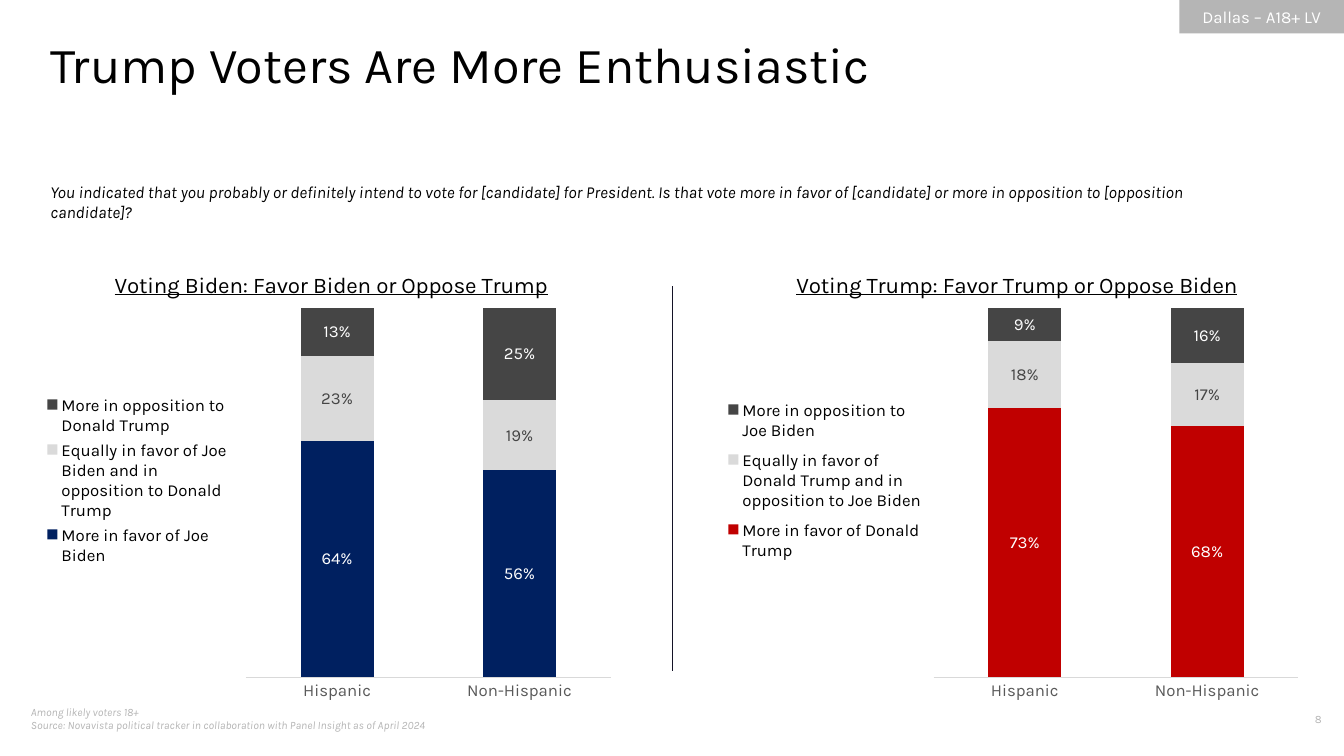
from lxml import etree
from pptx import Presentation
from pptx import util as u
from pptx.chart import data as cd
from pptx.dml import color as col
from pptx.enum import chart as ch, shapes, text
from pptx.oxml import ns

Cm, Pt = u.Cm, u.Pt


def style(font, size, tone, slant=False):
    font.name = "Karla"
    font.size = Pt(size)
    font.bold = False
    font.italic = slant
    font.color.rgb = col.RGBColor.from_string(tone)


def place(part, index, inner=False, **spots):
    for old in part.findall(ns.qn("c:layout")):
        part.remove(old)
    layout = etree.Element(ns.qn("c:layout"))
    manual = etree.SubElement(layout, ns.qn("c:manualLayout"))
    if inner:
        etree.SubElement(manual, ns.qn("c:layoutTarget"), val="inner")
    for mode in ("xMode", "yMode"):
        etree.SubElement(manual, ns.qn("c:" + mode), val="edge")
    for key, spot in spots.items():
        etree.SubElement(manual, ns.qn("c:" + key), val=str(spot))
    part.insert(index, layout)


deck = Presentation()
deck.slide_width, deck.slide_height = Cm(33.87), Cm(19.05)
slide = deck.slides.add_slide(deck.slide_layouts[5])

tag = slide.shapes.add_shape(shapes.MSO_SHAPE.RECTANGLE, Cm(29.72), 0, Cm(4.15), Cm(0.84))
tag.shadow.inherit = False
tag.fill.solid()
tag.fill.fore_color.rgb = col.RGBColor.from_string("B5B5B5")
tag.line.fill.background()
tag.text_frame.vertical_anchor = text.MSO_ANCHOR.MIDDLE
para = tag.text_frame.paragraphs[0]
para.alignment = text.PP_ALIGN.CENTER
run = para.add_run()
run.text = "Dallas – A18+ LV"
style(run.font, 12, "FFFFFF")

title = slide.shapes.title
title.left, title.top, title.width, title.height = Cm(1.27), Cm(0.84), Cm(30.48), Cm(1.55)

notes = [
    (0.53, 17.65, 12.98, 1.02, 8, "B5B5B5", True, "LEFT", [
        "Among likely voters 18+",
        "Source: Novavista political tracker in collaboration with Panel Insight as of April 2024"]),
    (31.32, 17.83, 2.24, 0.69, 8, "B5B5B5", False, "RIGHT", ["8"]),
    (1.27, 4.57, 30.48, 1.02, 12, "000000", True, "LEFT", [
        "You indicated that you probably or definitely intend to vote for [candidate] for President. "
        "Is that vote more in favor of [candidate] or more in opposition to [opposition candidate]?"]),
]
boxes = [(title, 36, "000000", False, "LEFT", ["Trump Voters Are More Enthusiastic"])]
for x, y, w, h, *look in notes:
    boxes.append((slide.shapes.add_textbox(Cm(x), Cm(y), Cm(w), Cm(h)), *look))

for box, size, tone, slant, side, lines in boxes:
    frame = box.text_frame
    frame.word_wrap = True
    frame.auto_size = text.MSO_AUTO_SIZE.NONE
    frame.vertical_anchor = text.MSO_ANCHOR.TOP
    if size > 8:
        frame.margin_left = frame.margin_right = frame.margin_top = frame.margin_bottom = 0
    para = frame.paragraphs[0]
    para.alignment = getattr(text.PP_ALIGN, side)
    for row, line in enumerate(lines):
        if row:
            para.add_line_break()
        run = para.add_run()
        run.text = line
        style(run.font, size, tone, slant)

rule = slide.shapes.add_connector(shapes.MSO_CONNECTOR.STRAIGHT, Cm(16.94), Cm(7.21), Cm(16.94), Cm(16.92))
rule.line.color.rgb = col.RGBColor.from_string("141327")
rule.line.width = Pt(0.5)
etree.SubElement(rule.element.spPr, ns.qn("a:effectLst"))

charts = [
    (0.86, 0.13, "Biden", "Trump", "Joe Biden", "Donald Trump", "002060",
     [(0.64, 0.56), (0.23, 0.19), (0.13, 0.25)]),
    (18.19, 0.12, "Trump", "Biden", "Donald Trump", "Joe Biden", "C00000",
     [(0.73, 0.68), (0.18, 0.17), (0.09, 0.16)]),
]
for left, start, pick, foe, name, rival, tone, shares in charts:
    data = cd.CategoryChartData(number_format="0%")
    data.categories = ["Hispanic", "Non-Hispanic"]
    stands = [f"More in favor of {name}",
              f"Equally in favor of {name} and in opposition to {rival}",
              f"More in opposition to {rival}"]
    for stand, share in zip(stands, shares):
        data.add_series(stand, share)
    chart = slide.shapes.add_chart(ch.XL_CHART_TYPE.COLUMN_STACKED, Cm(left), Cm(6.25),
                                   Cm(14.83), Cm(11.63), data).chart
    style(chart.font, 10, "000000")

    run = chart.chart_title.text_frame.paragraphs[0].add_run()
    run.text = f"Voting {pick}: Favor {pick} or Oppose {foe}"
    style(run.font, 16, "000000")
    run.font.underline = True
    place(chart.chart_title._element, 1, x=start, y=0.04)

    chart.has_legend = True
    chart.legend.position = ch.XL_LEGEND_POSITION.LEFT
    chart.legend.include_in_layout = False
    style(chart.legend.font, 12, "000000")
    place(chart.legend._element, 1, x=0.01, y=0.31, w=0.33, h=0.39)
    place(chart._chartSpace.chart.plotArea, 0, True, x=0.36, y=0.13, w=0.62, h=0.8)

    axis = chart.value_axis
    axis.minimum_scale, axis.maximum_scale = 0, 1
    axis.has_major_gridlines = False
    axis.visible = False
    axis = chart.category_axis
    axis.major_tick_mark = ch.XL_TICK_MARK.NONE
    axis.format.line.color.rgb = col.RGBColor.from_string("D9D9D9")
    axis.format.line.width = Pt(0.75)
    style(axis.tick_labels.font, 12, "595959")

    plot = chart.plots[0]
    plot.gap_width, plot.overlap = 150, 100
    plot.vary_by_categories = False
    inks = ["FFFFFF", "454545", "FFFFFF"]
    for bar, fill, ink in zip(plot.series, [tone, "DADADA", "454545"], inks):
        bar.format.fill.solid()
        bar.format.fill.fore_color.rgb = col.RGBColor.from_string(fill)
        marks = bar.data_labels
        marks.show_value = True
        marks.position = ch.XL_LABEL_POSITION.CENTER
        marks.number_format = "0%"
        marks.number_format_is_linked = False
        style(marks.font, 12, ink)

deck.save("out.pptx")
